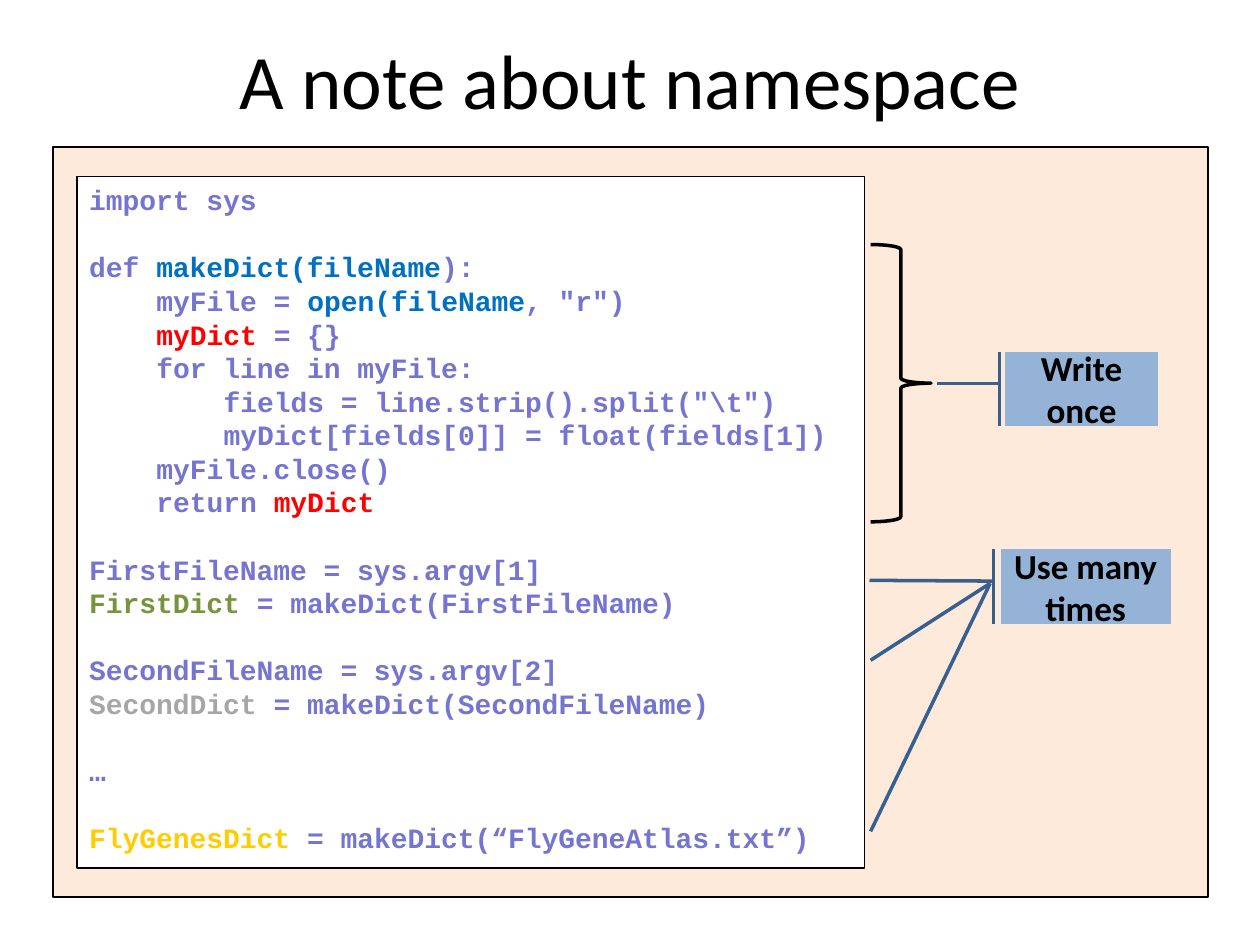
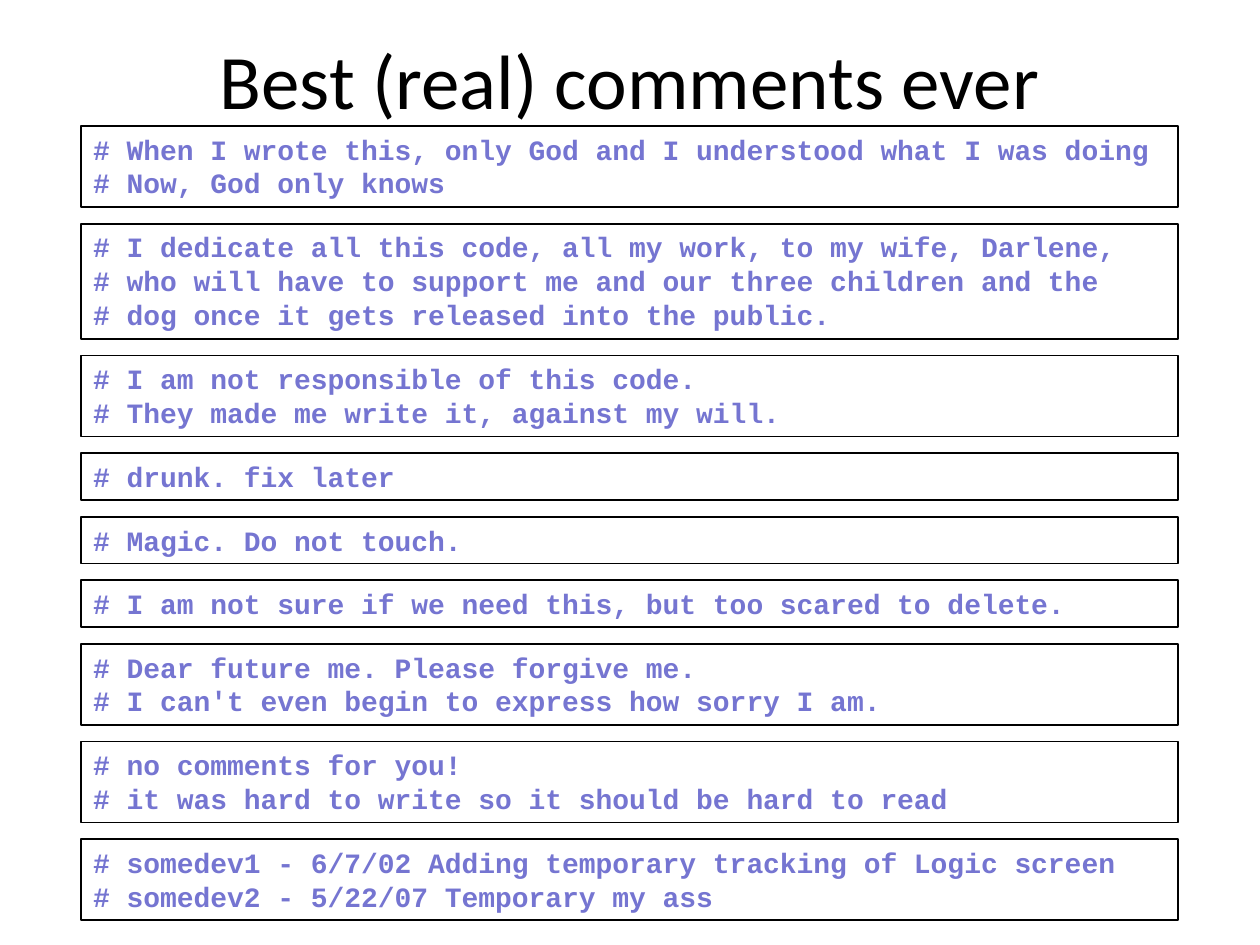
"""Build two slides on code names and code comments."""
from dataclasses import dataclass

from lxml import etree
from pptx import Presentation
from pptx.dml.color import RGBColor
from pptx.enum.shapes import MSO_CONNECTOR, MSO_SHAPE
from pptx.enum.text import MSO_ANCHOR, PP_ALIGN
from pptx.oxml.ns import qn
from pptx.shapes.autoshape import Shape
from pptx.slide import Slide
from pptx.text.text import Font
from pptx.util import Cm, Pt

BLACK = RGBColor(0x00, 0x00, 0x00)
WHITE = RGBColor(0xFF, 0xFF, 0xFF)
PEACH = RGBColor(0xFD, 0xEA, 0xDA)
VIOLET = RGBColor(0x75, 0x75, 0xD1)
BLUE = RGBColor(0x00, 0x70, 0xC0)
RED = RGBColor(0xFF, 0x00, 0x00)
GREEN = RGBColor(0x77, 0x93, 0x3C)
GREY = RGBColor(0xA6, 0xA6, 0xA6)
GOLD = RGBColor(0xFF, 0xCC, 0x00)
SKY = RGBColor(0x95, 0xB3, 0xD7)
STEEL = RGBColor(0x3A, 0x5F, 0x8C)
NAVY = RGBColor(0x37, 0x60, 0x92)

RECT = MSO_SHAPE.RECTANGLE
BRACE = MSO_SHAPE.RIGHT_BRACE
CALLOUT = MSO_SHAPE.LINE_CALLOUT_1_ACCENT_BAR
STRAIGHT = MSO_CONNECTOR.STRAIGHT
TOP, MIDDLE = MSO_ANCHOR.TOP, MSO_ANCHOR.MIDDLE
LEFT, CENTER = PP_ALIGN.LEFT, PP_ALIGN.CENTER

TITLE_ONLY = 5
SANS, MONO = "Calibri", "Courier New"
PITCH = Pt(19.2)
TAB = Pt(38.4)


@dataclass(frozen=True)
class Box:
    """A place on the slide in centimetres."""

    left: float
    top: float
    width: float
    height: float


@dataclass(frozen=True)
class Word:
    """A stretch of code in one colour."""

    text: str
    color: RGBColor = VIOLET


@dataclass(frozen=True)
class Line:
    """A line of code with its depth and the gap above it."""

    words: tuple[Word, ...]
    depth: int = 0
    gap: bool = False


@dataclass(frozen=True)
class Label:
    """A callout with the points of its leader."""

    text: str
    box: Box
    leader: tuple[float, ...]


TITLE = Box(0, 0, 25.4, 3.18)
PANEL = Box(1.07, 2.97, 23.29, 15.11)
LISTING = Box(1.55, 3.56, 15.88, 13.94)
SPAN = Box(17.55, 4.93, 1.22, 5.59)
CODE = (
    Line((Word("import sys"),)),
    Line((Word("def "), Word("makeDict(fileName", BLUE), Word("):")), gap=True),
    Line((Word("myFile = "), Word("open(fileName", BLUE), Word(', "r")')), 1),
    Line((Word("myDict ", RED), Word("= {}")), 1),
    Line((Word("for line in myFile:"),), 1),
    Line((Word(r'fields = line.strip().split("\t")'),), 2),
    Line((Word("myDict[fields[0]] = float(fields[1])"),), 2),
    Line((Word("myFile.close()"),), 1),
    Line((Word("return "), Word("myDict", RED)), 1),
    Line((Word("FirstFileName = sys.argv[1]"),), gap=True),
    Line((Word("FirstDict ", GREEN), Word("= makeDict(FirstFileName)"))),
    Line((Word("SecondFileName = sys.argv[2]"),), gap=True),
    Line((Word("SecondDict ", GREY), Word("= makeDict(SecondFileName)"))),
    Line((Word("…"),), gap=True),
    Line((Word("FlyGenesDict ", GOLD), Word("= makeDict(“FlyGeneAtlas.txt”)")), gap=True),
)
WRITE = Label("Write once", Box(20.27, 7.09, 3.07, 1.5), (0.43, -0.04, 0.43, -0.45))
USE = Label("Use many times", Box(20.17, 11.07, 3.43, 1.5), (0.43, -0.04, 0.42, -0.77))
HUB = (19.96, 11.76)
CALLS = ((17.55, 13.31), (17.55, 16.76))

NOTES = (
    ("# When I wrote this, only God and I understood what I was doing",
     "# Now, God only knows"),
    ("# I dedicate all this code, all my work, to my wife, Darlene,",
     "# who will have to support me and our three children and the",
     "# dog once it gets released into the public."),
    ("# I am not responsible of this code.",
     "# They made me write it, against my will."),
    ("# drunk. fix later",),
    ("# Magic. Do not touch.",),
    ("# I am not sure if we need this, but too scared to delete.",),
    ("# Dear future me. Please forgive me.",
     "# I can't even begin to express how sorry I am."),
    ("# no comments for you!",
     "# it was hard to write so it should be hard to read"),
    ("# somedev1 - 6/7/02 Adding temporary tracking of Logic screen",
     "# somedev2 - 5/22/07 Temporary my ass"),
)
NOTE_LEFT, NOTE_TOP, NOTE_WIDTH = 1.63, 2.54, 22.12
NOTE_PAD, NOTE_ROW, NOTE_GAP = 0.25, 0.69, 0.34


def style(font: Font, name: str, size: int, color: RGBColor, bold: bool = False) -> None:
    """Set the look of a font."""
    font.name, font.size, font.bold = name, Pt(size), bold
    font.color.rgb = color


def place(shape: Shape, box: Box) -> None:
    """Move a shape to a box."""
    shape.left, shape.top = Cm(box.left), Cm(box.top)
    shape.width, shape.height = Cm(box.width), Cm(box.height)


def start(deck: Presentation, title: str) -> Slide:
    """Add a slide with its title."""
    slide = deck.slides.add_slide(deck.slide_layouts[TITLE_ONLY])
    head = slide.shapes.title
    place(head, TITLE)
    frame = head.text_frame
    frame.text = title
    frame.vertical_anchor = MIDDLE
    para = frame.paragraphs[0]
    para.alignment = CENTER
    style(para.runs[0].font, SANS, 44, BLACK)
    return slide


def draw(slide: Slide, kind: MSO_SHAPE, box: Box, fill: RGBColor | None,
         line: RGBColor = BLACK, weight: float = 1) -> Shape:
    """Draw a flat shape, unfilled when no fill is given."""
    shape = slide.shapes.add_shape(
        kind, Cm(box.left), Cm(box.top), Cm(box.width), Cm(box.height))
    shape.shadow.inherit = False
    if fill is None:
        shape.fill.background()
    else:
        shape.fill.solid()
        shape.fill.fore_color.rgb = fill
    shape.line.color.rgb = line
    shape.line.width = Pt(weight)
    return shape


def add_code(slide: Slide, box: Box, lines: tuple[Line, ...]) -> None:
    """Draw a white box of code."""
    frame = draw(slide, RECT, box, WHITE).text_frame
    frame.word_wrap = True
    frame.vertical_anchor = TOP
    for rank, line in enumerate(lines):
        para = frame.add_paragraph() if rank else frame.paragraphs[0]
        para.alignment = LEFT
        para.line_spacing = PITCH
        if line.gap:
            para.space_before = PITCH
        if line.depth:
            para._p.get_or_add_pPr().set("marL", str(line.depth * TAB))
        for word in line.words:
            run = para.add_run()
            run.text = word.text
            style(run.font, MONO, 16, word.color, True)


def add_label(slide: Slide, label: Label) -> None:
    """Draw a callout with its leader."""
    shape = draw(slide, CALLOUT, label.box, SKY, STEEL, 2)
    for rank, value in enumerate(label.leader):
        shape.adjustments[rank] = value
    frame = shape.text_frame
    frame.text = label.text
    frame.word_wrap = True
    frame.vertical_anchor = MIDDLE
    para = frame.paragraphs[0]
    para.alignment = CENTER
    style(para.runs[0].font, SANS, 20, BLACK, True)


def link(slide: Slide, tail: tuple[float, float], head: tuple[float, float]) -> None:
    """Draw a flat line between two points."""
    line = slide.shapes.add_connector(
        STRAIGHT, Cm(tail[0]), Cm(tail[1]), Cm(head[0]), Cm(head[1]))
    line.line.color.rgb = NAVY
    line.line.width = Pt(2)
    etree.SubElement(line._element.spPr, qn("a:effectLst"))


def show_names(deck: Presentation) -> None:
    """Build the slide on names."""
    slide = start(deck, "A note about namespace")
    draw(slide, RECT, PANEL, PEACH)
    add_code(slide, LISTING, CODE)
    add_label(slide, WRITE)
    draw(slide, BRACE, SPAN, None, weight=2)
    add_label(slide, USE)
    for call in CALLS:
        link(slide, call, HUB)


def show_notes(deck: Presentation) -> None:
    """Build the slide of stacked comments."""
    slide = start(deck, "Best (real) comments ever")
    top = NOTE_TOP
    for note in NOTES:
        height = NOTE_PAD + NOTE_ROW * len(note)
        lines = tuple(Line((Word(text),)) for text in note)
        add_code(slide, Box(NOTE_LEFT, top, NOTE_WIDTH, height), lines)
        top += height + NOTE_GAP


def main() -> None:
    """Build and save the deck."""
    deck = Presentation()
    deck.slide_width, deck.slide_height = Cm(25.4), Cm(19.05)
    show_names(deck)
    show_notes(deck)
    deck.save("out.pptx")


if __name__ == "__main__":
    main()
